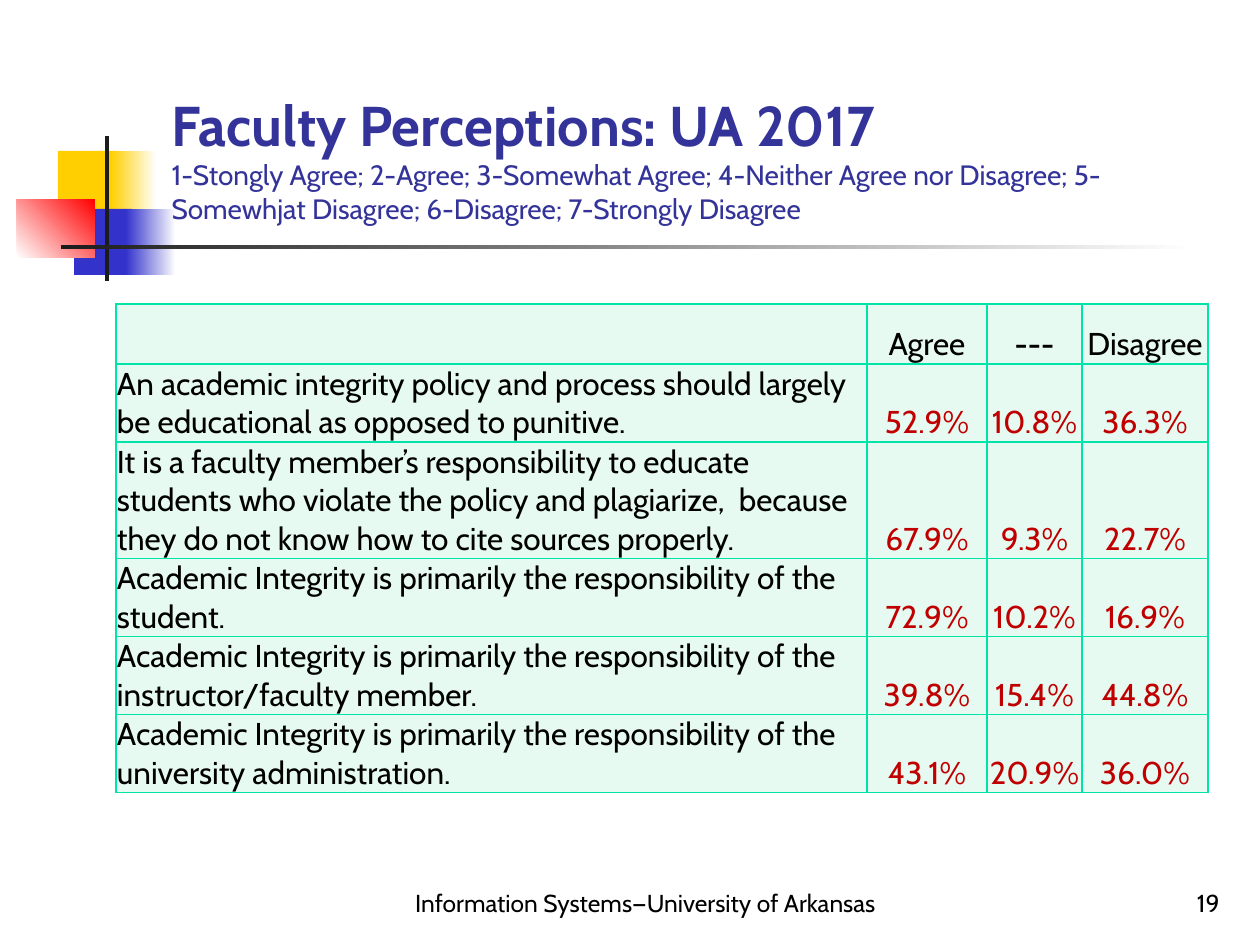
from lxml.etree import SubElement
from pptx import Presentation
from pptx.dml.color import RGBColor
from pptx.enum.shapes import MSO_SHAPE
from pptx.enum.text import MSO_ANCHOR, MSO_AUTO_SIZE, PP_ALIGN
from pptx.oxml.ns import qn
from pptx.util import Emu, Pt

SCALE = 914400 / 126
HEX = {
    "gold": "FFCF01", "blue": "3333CC", "red": "FF0000", "dark": "1C1C1C",
    "white": "FFFFFF", "navy": "333399", "black": "000000",
    "mint": "E7FAF1", "green": "00E4A8", "crimson": "C00000",
}


def px(num):
    return Emu(round(num * SCALE))


def rgb(name):
    return RGBColor.from_string(HEX[name])


class Deck:
    """Holds the style and the current slide."""

    font = "Cabin"

    def __init__(self):
        self.prs = Presentation()
        self.prs.slide_width, self.prs.slide_height = px(1260), px(945)
        self.slide = self.prs.slides.add_slide(self.prs.slide_layouts[5])
        self.shapes = self.slide.shapes

    def run(self, para, text, size, color="black", bold=False):
        run = para.add_run()
        run.text = text
        form = {"name": self.font, "size": Pt(size), "bold": bold}
        for key, val in form.items():
            setattr(run.font, key, val)
        run.font.color.rgb = rgb(color)

    def frame(self, frame):
        form = {"word_wrap": True, "auto_size": MSO_AUTO_SIZE.NONE,
                "vertical_anchor": MSO_ANCHOR.BOTTOM}
        for key, val in form.items():
            setattr(frame, key, val)
        return frame.paragraphs[0]

    def rect(self, box, start, end=None, angle=0):
        """Draw a plain bar, or one that fades from start to end."""
        shape = self.shapes.add_shape(MSO_SHAPE.RECTANGLE, *map(px, box))
        shape.shadow.inherit = False
        shape.line.fill.background()
        if end is None:
            shape.fill.solid()
            shape.fill.fore_color.rgb = rgb(start)
            return
        shape.fill.gradient()
        shape.fill.gradient_angle = angle
        for stop, color in zip(shape.fill.gradient_stops, (start, end)):
            stop.color.rgb = rgb(color)

    def title(self, box, head, scale):
        title = self.shapes.title
        for key, val in zip(("left", "top", "width", "height"), box):
            setattr(title, key, px(val))
        para = self.frame(title.text_frame)
        para.alignment = PP_ALIGN.LEFT
        self.run(para, head, 32, "navy", True)
        para.add_line_break()
        self.run(para, scale, 16, "navy")
        self.shapes._spTree.append(title._element)  # in front of the bars

    def text(self, box, text, align):
        para = self.frame(self.shapes.add_textbox(*map(px, box)).text_frame)
        para.alignment = align
        self.run(para, text, 14)

    def border(self, cell):
        props = cell._tc.get_or_add_tcPr()
        for spot, side in enumerate(("lnL", "lnR", "lnT", "lnB")):
            line = SubElement(props, qn(f"a:{side}"), w=str(Pt(1)))
            fill = SubElement(line, qn("a:solidFill"))
            SubElement(fill, qn("a:srgbClr"), val=HEX["green"])
            props.insert(spot, line)

    def cell(self, cell, text, align, color, bold):
        form = {"margin_left": px(1), "margin_right": px(1),
                "margin_top": px(1), "margin_bottom": 0,
                "vertical_anchor": MSO_ANCHOR.BOTTOM}
        for key, val in form.items():
            setattr(cell, key, val)
        cell.fill.solid()
        cell.fill.fore_color.rgb = rgb("mint")
        self.border(cell)
        if text:
            para = cell.text_frame.paragraphs[0]
            para.alignment = align
            self.run(para, text, 18, color, bold)

    def table(self, left, top, wide, high, rows):
        box = map(px, (left, top, sum(wide), sum(high)))
        table = self.shapes.add_table(len(high), len(wide), *box).table
        table.first_row = table.horz_banding = False
        for col, num in zip(table.columns, wide):
            col.width = px(num)
        for row, num in zip(table.rows, high):
            row.height = px(num)
        for r, row in enumerate(rows):
            for c, text in enumerate(row):
                align = PP_ALIGN.CENTER if c else PP_ALIGN.LEFT
                color = "crimson" if r and c else "black"
                self.cell(table.cell(r, c), text, align, color, text == "---")


BARS = [
    ((58, 151, 60, 66), "gold"),
    ((111, 151, 45, 66), "gold", "white"),
    ((74, 209, 58, 66), "blue"),
    ((126, 209, 50, 66), "blue", "white"),
    ((17, 199, 78, 59), "white", "red", 45),
    ((105, 136, 4, 145), "dark"),
    ((61, 245, 1134, 4), "dark", "white"),
]
DUTY = "Academic Integrity is primarily the responsibility of the "
ROWS = [
    ("", "Agree", "---", "Disagree"),
    ("An academic integrity policy and process should largely be educational "
     "as opposed to punitive.", "52.9%", "10.8%", "36.3%"),
    ("It is a faculty member’s responsibility to educate students who violate "
     "the policy and plagiarize,  because they do not know how to cite "
     "sources properly.", "67.9%", "9.3%", "22.7%"),
    (DUTY + "student.", "72.9%", "10.2%", "16.9%"),
    (DUTY + "instructor/faculty member.", "39.8%", "15.4%", "44.8%"),
    (DUTY + "university administration.", "43.1%", "20.9%", "36.0%"),
]


def main():
    deck = Deck()
    for bar in BARS:
        deck.rect(*bar)
    deck.title((159, 29, 1074, 202), "Faculty Perceptions: UA 2017",
               "1-Stongly Agree; 2-Agree; 3-Somewhat Agree; 4-Neither Agree "
               "nor Disagree; 5-Somewhjat Disagree; 6-Disagree; "
               "7-Strongly Disagree")
    deck.text((378, 861, 535, 63), "Information Systems—University of Arkansas",
              PP_ALIGN.CENTER)
    deck.text((970, 861, 262, 63), "19", PP_ALIGN.RIGHT)
    deck.table(116, 304, (751, 120, 95, 126), (60, 78, 116, 78, 78, 78), ROWS)
    deck.prs.save("out.pptx")


if __name__ == "__main__":
    main()
